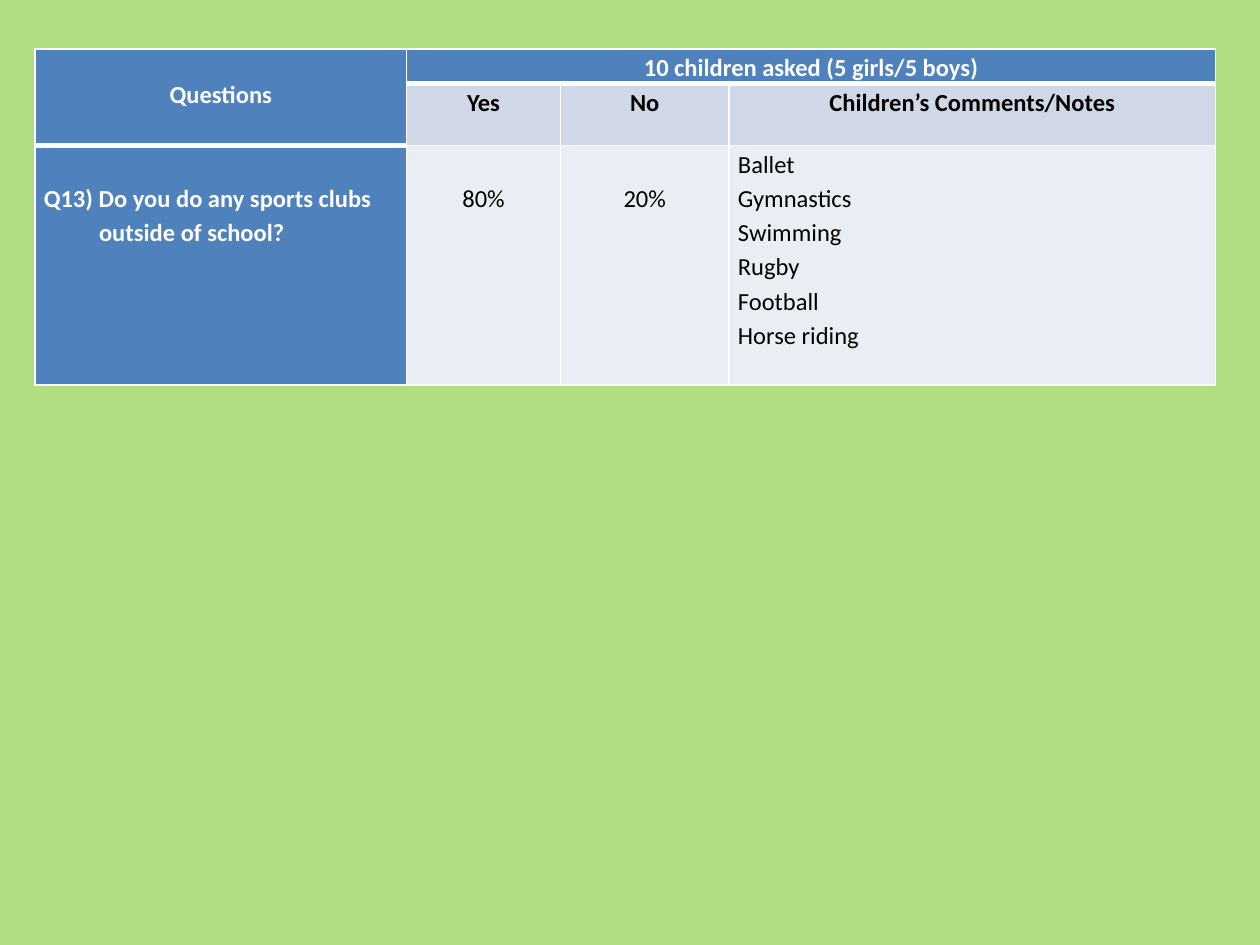
import lxml.etree
import pptx
import pptx.dml.color
import pptx.enum.text
import pptx.oxml.ns
import pptx.util

Pt = pptx.util.Pt
RGB = pptx.dml.color.RGBColor
ALIGN = pptx.enum.text.PP_ALIGN

GREEN = RGB(0xB2, 0xDE, 0x83)
BLUE = RGB(0x4F, 0x81, 0xBD)
PALE_BLUE = RGB(0xD0, 0xD8, 0xE8)
PALE_GREY = RGB(0xE9, 0xED, 0xF4)
WHITE = RGB(0xFF, 0xFF, 0xFF)
BLACK = RGB(0, 0, 0)

COLUMN_WIDTHS = (212.4, 87.8, 96.5, 277.9)
ROW_HEIGHTS = (18.9, 35.4, 137.1)
HEADER_DROP = 15.4
ANSWER_DROP = 19.6
SPORTS = ("Ballet", "Gymnastics", "Swimming", "Rugby", "Football", "Horse riding")


class SurveySlide:
    font = "Calibri"
    size = 14
    line_spacing = 1.15
    side_margin = 5

    def __init__(self, deck):
        self.page = deck.slides.add_slide(deck.slide_layouts[6])
        self.page.background.fill.solid()
        self.page.background.fill.fore_color.rgb = GREEN

    def table(self, left, top, widths, heights):
        frame = self.page.shapes.add_table(
            len(heights), len(widths), Pt(left), Pt(top), Pt(sum(widths)), Pt(sum(heights)))
        table = frame.table
        table.first_row = table.horz_banding = False
        for column, width in zip(table.columns, widths):
            column.width = Pt(width)
        for row, height in zip(table.rows, heights):
            row.height = Pt(height)
        return table

    def cell(self, cell, lines, fill, color=BLACK, bold=False, align=ALIGN.CENTER, drop=0):
        """Fill a cell with one paragraph per line, starting `drop` points down."""
        cell.fill.solid()
        cell.fill.fore_color.rgb = fill
        cell.margin_left = cell.margin_right = Pt(self.side_margin)
        cell.margin_top, cell.margin_bottom = Pt(drop), 0
        frame = cell.text_frame
        frame.text = "\n".join(lines)
        for para in frame.paragraphs:
            para.alignment = align
            para.line_spacing = self.line_spacing
            para.font.name = self.font
            para.font.size = Pt(self.size)
            para.font.bold = bold
            para.font.color.rgb = color

    def borders(self, cell, **widths):
        """Draw white borders; the keys are L, R, T and B, in that order."""
        properties = cell._tc.get_or_add_tcPr()
        for position, (side, width) in enumerate(widths.items()):
            line = lxml.etree.Element(pptx.oxml.ns.qn(f"a:ln{side}"), w=str(Pt(width)))
            fill = lxml.etree.SubElement(line, pptx.oxml.ns.qn("a:solidFill"))
            lxml.etree.SubElement(fill, pptx.oxml.ns.qn("a:srgbClr"), val=str(WHITE))
            properties.insert(position, line)


def main():
    deck = pptx.Presentation()
    deck.slide_width, deck.slide_height = Pt(720), Pt(540)
    slide = SurveySlide(deck)
    table = slide.table(20, 28, COLUMN_WIDTHS, ROW_HEIGHTS)
    table.cell(0, 0).merge(table.cell(1, 0))
    table.cell(0, 1).merge(table.cell(0, 3))

    heading = {"fill": BLUE, "color": WHITE, "bold": True}
    slide.cell(table.cell(0, 0), ["Questions"], drop=HEADER_DROP, **heading)
    slide.cell(table.cell(0, 1), ["10 children asked (5 girls/5 boys)"], **heading)
    for column, label in enumerate(("Yes", "No", "Children’s Comments/Notes"), 1):
        slide.cell(table.cell(1, column), [label], PALE_BLUE, bold=True)

    question = table.cell(2, 0)
    slide.cell(question, ["Q13) Do you do any sports clubs", "outside of school?"],
               align=ALIGN.LEFT, drop=ANSWER_DROP, **heading)
    second_line = question.text_frame.paragraphs[1]
    second_line._p.get_or_add_pPr().set("marL", str(Pt(31.6)))
    for column, share in enumerate(("80%", "20%"), 1):
        slide.cell(table.cell(2, column), [share], PALE_GREY, drop=ANSWER_DROP)
    slide.cell(table.cell(2, 3), SPORTS, PALE_GREY, align=ALIGN.LEFT)

    for row in range(len(ROW_HEIGHTS)):
        for column in range(len(COLUMN_WIDTHS)):
            under_heading = row == 0 or (row, column) == (1, 0)
            top = {"T": 1} if row == 0 else {}
            slide.borders(table.cell(row, column), L=1, R=1, **top,
                          B=3 if under_heading else 1)

    deck.save("out.pptx")


if __name__ == "__main__":
    main()
